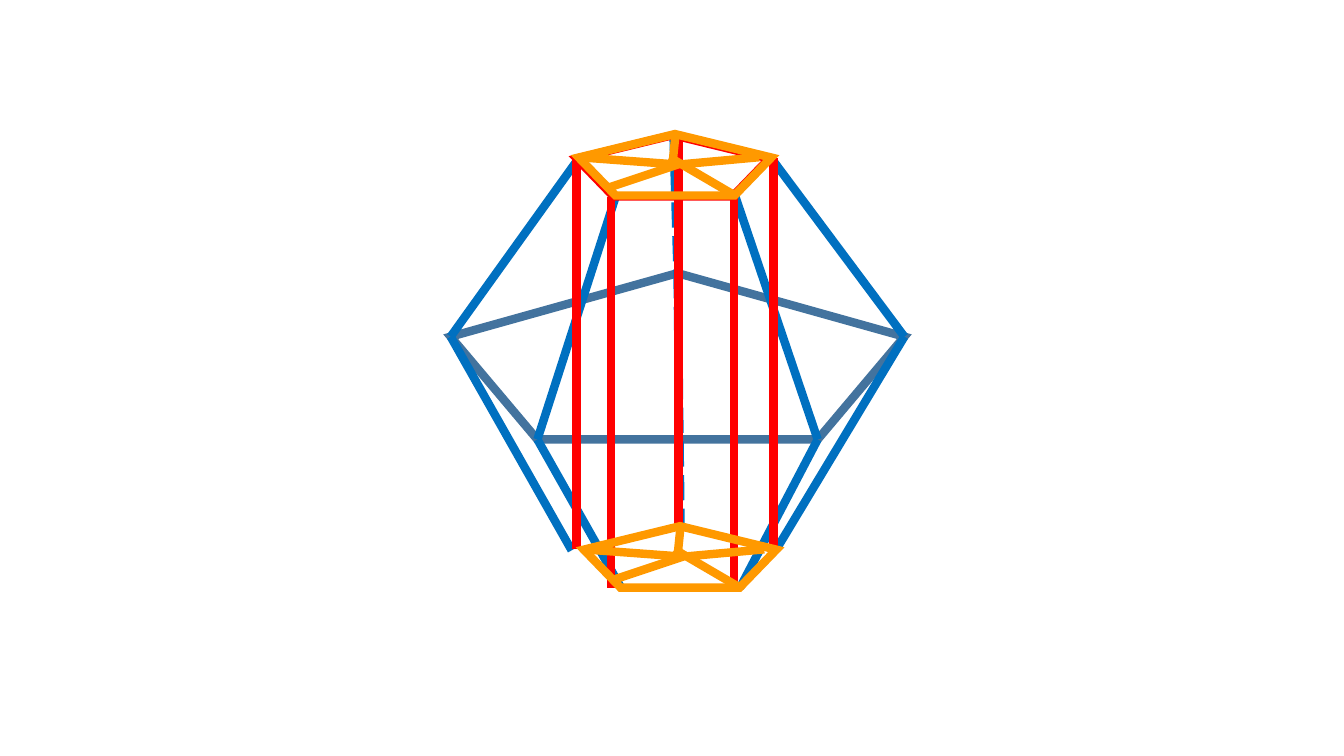
from lxml.etree import SubElement
from pptx import Presentation
from pptx.dml.color import RGBColor
from pptx.enum.dml import MSO_LINE
from pptx.enum.shapes import MSO_CONNECTOR, MSO_SHAPE
from pptx.oxml.ns import qn
from pptx.util import Inches, Pt

STEEL = RGBColor(0x43, 0x73, 0x9E)
BLUE = RGBColor(0x00, 0x70, 0xC0)
RED = RGBColor(0xFF, 0x00, 0x00)
ORANGE = RGBColor(0xFF, 0x99, 0x00)

BACK, RIGHT, FRONT_R, FRONT_L, LEFT = (
    (6.72, 2.71), (8.97, 3.34), (8.11, 4.36), (5.33, 4.36), (4.47, 3.34))
EDGES = [
    ((7.65, 1.57), RIGHT),
    ((5.74, 1.57), LEFT),
    ((6.11, 1.94), FRONT_L),
    ((7.29, 1.94), FRONT_R),
    (FRONT_L, (6.16, 5.83)),
    (FRONT_R, (7.34, 5.83)),
    (RIGHT, (7.7, 5.45)),
    (LEFT, (5.67, 5.46)),
]
HIDDEN = [((6.68, 1.34), BACK), (BACK, (6.75, 5.22))]
POSTS = [(5.72, 1.57), (6.06, 1.95), (7.28, 1.95), (6.73, 1.32), (7.67, 1.57)]
HEIGHT = 3.88
CAP = (1.91, 0.61)
SPOKES = [
    ((0.9, 0.23), (1.55, 0.61)),
    ((1.02, 0.3), (1.79, 0.23)),
    ((0.99, 0.3), (0.27, 0.54)),
    ((0.95, 0.3), (0, 0.23)),
    ((0.93, 0.3), (0.96, 0)),
]


def style(item, color):
    item.line.color.rgb = color
    item.line.width = Pt(6)


def add_line(shapes, start, end, color, dash=None):
    ends = [Inches(n) for n in (*start, *end)]
    line = shapes.add_connector(MSO_CONNECTOR.STRAIGHT, *ends)
    style(line, color)
    if dash:
        line.line.dash_style = dash
    SubElement(line.element.spPr, qn("a:effectLst"))


def add_ring(shapes, spot, size, color):
    box = [Inches(n) for n in (*spot, *size)]
    ring = shapes.add_shape(MSO_SHAPE.REGULAR_PENTAGON, *box)
    ring.shadow.inherit = False
    ring.fill.background()
    style(ring, color)
    SubElement(ring.element.spPr.find(qn("a:ln")), qn("a:miter"), lim="800000")


def add_cap(shapes, left, top):
    group = shapes.add_group_shape().shapes
    add_ring(group, (left, top), CAP, ORANGE)
    for spoke in SPOKES:
        start, end = [(left + x, top + y) for x, y in spoke]
        add_line(group, start, end, ORANGE)


def main():
    deck = Presentation()
    deck.slide_width = Inches(13.33)
    deck.slide_height = Inches(7.5)
    shapes = deck.slides.add_slide(deck.slide_layouts[6]).shapes

    add_ring(shapes, (4.47, 2.71), (4.5, 1.65), STEEL)
    for start, end in EDGES:
        add_line(shapes, start, end, BLUE)
    for start, end in HIDDEN:
        add_line(shapes, start, end, BLUE, MSO_LINE.SQUARE_DOT)

    add_ring(shapes, (5.72, 1.34), CAP, RED)
    for x, y in POSTS:
        add_line(shapes, (x, y), (x, y + HEIGHT), RED)

    add_cap(shapes, 5.79, 5.22)
    add_cap(shapes, 5.74, 1.33)
    deck.save("out.pptx")


if __name__ == "__main__":
    main()
